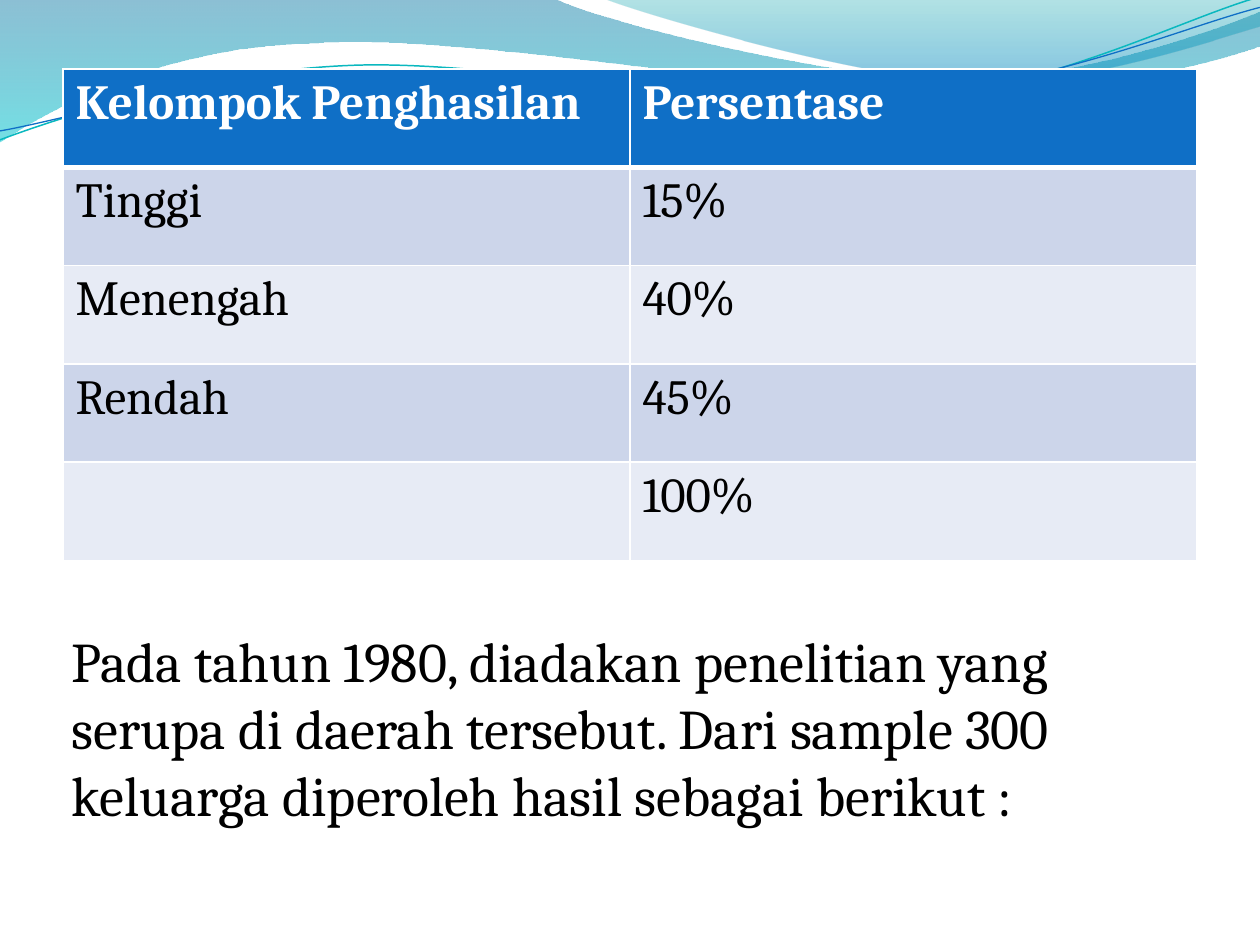
import dataclasses

import lxml.etree
import pptx
import pptx.dml.color
import pptx.enum.text
import pptx.oxml
import pptx.oxml.ns
import pptx.util

Cm = pptx.util.Cm
Pt = pptx.util.Pt
qn = pptx.oxml.ns.qn


@dataclasses.dataclass(frozen=True)
class Theme:
    """Colours, font and type sizes of the slide."""
    font: str = "Cambria"
    table_size: int = 28
    body_size: int = 32
    blue: str = "0F6FC6"
    teal: str = "0AB8BF"
    dark_band: str = "CCD5EA"
    light_band: str = "E7EBF5"
    white: str = "FFFFFF"
    black: str = "000000"
    wide_wave: tuple = ((0, "0074A1", 45), (100, "00C6CF", 55))
    right_wave: tuple = ((0, "00A1A9", 30), (80, "008BBF", 45))


THEME = Theme()

WIDE_WAVE = [
    (0, 0), (11.18, -0.03),
    ((12.09, 0.43), (16.87, 1.6), (19.25, 1.6)),
    ((21.67, 1.6), (24.33, 0.66), (25.4, 0.23)),
    (25.43, 0.91),
    ((24.97, 1.12), (22.1, 1.93), (18.95, 1.91)),
    ((15.8, 1.91), (9.7, 0.71), (6.53, 0.86)),
    ((3.28, 0.91), (1.17, 2.11), (-0.03, 2.87)),
]
RIGHT_WAVE = [
    (12.17, -0.03),
    ((12.93, 0.28), (17.32, 1.57), (19.53, 1.65)),
    ((21.74, 1.75), (24.41, 0.81), (25.4, 0.53)),
    (25.4, 0),
]
TEAL_STRAND = [
    (0, 2.82),
    ((1.22, 2.36), (4.01, 1.45), (7.04, 1.32)),
    ((10.03, 1.19), (15.06, 2.26), (18.11, 2.03)),
    ((21.16, 1.8), (23.83, 0.38), (25.35, -0.05)),
]
BLUE_STRAND = [
    (0, 2.64),
    ((1.19, 2.44), (4.17, 1.55), (7.19, 1.42)),
    ((10.24, 1.3), (15.16, 2.13), (18.21, 1.91)),
    ((21.23, 1.7), (23.9, 0.53), (25.4, 0.15)),
]
INCOME_ROWS = [
    ("Kelompok Penghasilan", "Persentase"),
    ("Tinggi", "15%"),
    ("Menengah", "40%"),
    ("Rendah", "45%"),
    ("", "100%"),
]
STUDY_TEXT = ("Pada tahun 1980, diadakan penelitian yang serupa di daerah tersebut. "
              "Dari sample 300 keluarga diperoleh hasil sebagai berikut :")


def rgb(colour):
    """Return the colour object for a hex value."""
    return pptx.dml.color.RGBColor.from_string(colour)


def bend(outline, line, controls):
    """Turn one straight step of an outline into a cubic curve."""
    curve = lxml.etree.Element(qn("a:cubicBezTo"))
    for x, y in controls:
        lxml.etree.SubElement(curve, qn("a:pt"), x=str(Cm(x) - outline.left),
                              y=str(Cm(y) - outline.top))
    line.getparent().replace(line, curve)


def add_outline(slide, segments, closed):
    """Draw an outline of straight and curved segments given in centimetres."""
    anchors = [segment if len(segment) == 2 else segment[-1] for segment in segments]
    start, *rest = [(Cm(x), Cm(y)) for x, y in anchors]
    builder = slide.shapes.build_freeform(*start)
    builder.add_line_segments(rest, close=closed)
    outline = builder.convert_to_shape()
    outline.shadow.inherit = False
    lines = list(outline._element.iter(qn("a:lnTo")))
    for line, segment in zip(lines, segments[1:]):
        if len(segment) == 3:
            bend(outline, line, segment)
    return outline


def add_wave(slide, segments, stops):
    """Add a wave filled with a translucent downward gradient."""
    wave = add_outline(slide, segments, True)
    wave.line.fill.background()
    wave.fill.gradient()
    gradient = wave.fill._fill._gradFill
    stop_list = gradient.find(qn("a:gsLst"))
    for old_stop in list(stop_list):
        stop_list.remove(old_stop)
    for position, colour, opacity in stops:
        stop = lxml.etree.SubElement(stop_list, qn("a:gs"), pos=str(position * 1000))
        tint = lxml.etree.SubElement(stop, qn("a:srgbClr"), val=colour)
        lxml.etree.SubElement(tint, qn("a:alpha"), val=str(opacity * 1000))
    gradient.find(qn("a:lin")).set("ang", str(90 * 60000))


def add_strand(slide, segments, colour, width):
    """Add a thin curved line."""
    strand = add_outline(slide, segments, False)
    strand.fill.background()
    strand.line.color.rgb = rgb(colour)
    strand.line.width = Pt(width)


def format_text(frame, size, colour, bold=False):
    """Apply the theme font to every run of a text frame."""
    for paragraph in frame.paragraphs:
        for run in paragraph.runs:
            run.font.name = THEME.font
            run.font.size = Pt(size)
            run.font.bold = bold
            run.font.color.rgb = rgb(colour)


def set_borders(cell, widths):
    """Give a cell white borders, left, right, top and bottom, in points."""
    properties = cell._tc.get_or_add_tcPr()
    for index, (side, width) in enumerate(zip("LRTB", widths)):
        border = lxml.etree.Element(qn(f"a:ln{side}"), w=str(Pt(width)))
        fill = lxml.etree.SubElement(border, qn("a:solidFill"))
        lxml.etree.SubElement(fill, qn("a:srgbClr"), val=THEME.white)
        properties.insert(index, border)


def add_income_table(slide):
    """Add the banded table of income groups."""
    table = slide.shapes.add_table(len(INCOME_ROWS), 2, Cm(1.27), Cm(1.39),
                                   Cm(22.86), Cm(9.91)).table
    for row, labels in enumerate(INCOME_ROWS):
        header = row == 0
        band = THEME.blue if header else (THEME.light_band, THEME.dark_band)[row % 2]
        for column, label in enumerate(labels):
            cell = table.cell(row, column)
            cell.text_frame.text = label
            format_text(cell.text_frame, THEME.table_size,
                        THEME.white if header else THEME.black, header)
            cell.fill.solid()
            cell.fill.fore_color.rgb = rgb(band)
            set_borders(cell, (1, 1, 3 if row == 1 else 1, 3 if header else 1))


def add_study_text(slide):
    """Add the paragraph that introduces the 1980 study."""
    study = slide.shapes.add_textbox(Cm(1.19), Cm(12.5), Cm(22.63), Cm(4.37)).text_frame
    study.word_wrap = True
    study.auto_size = pptx.enum.text.MSO_AUTO_SIZE.SHAPE_TO_FIT_TEXT
    study.text = STUDY_TEXT
    format_text(study, THEME.body_size, THEME.black)


def main():
    """Build and save the slide."""
    deck = pptx.Presentation()
    deck.slide_width, deck.slide_height = Cm(25.4), Cm(19.05)
    slide = deck.slides.add_slide(deck.slide_layouts[6])
    add_wave(slide, WIDE_WAVE, THEME.wide_wave)
    add_wave(slide, RIGHT_WAVE, THEME.right_wave)
    strands = slide.shapes.add_group_shape()
    add_strand(strands, TEAL_STRAND, THEME.teal, 0.85)
    add_strand(strands, BLUE_STRAND, THEME.blue, 0.75)
    add_income_table(slide)
    add_study_text(slide)
    deck.save("out.pptx")


if __name__ == "__main__":
    main()
